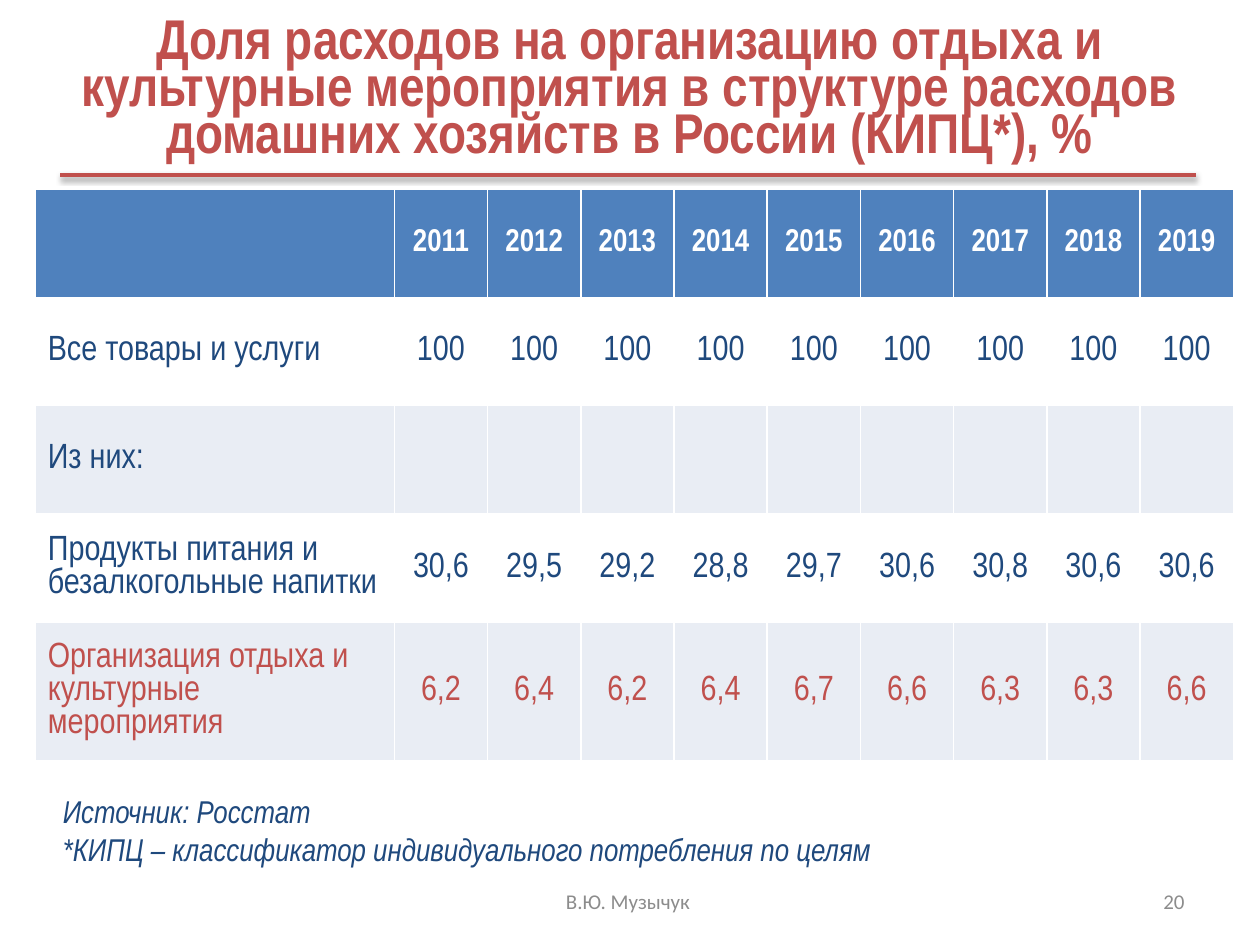
"""Build the slide on the share of leisure spending in Russian households."""
from dataclasses import dataclass, replace

from lxml.etree import SubElement
from pptx import Presentation
from pptx.dml.color import RGBColor
from pptx.enum.shapes import MSO_CONNECTOR
from pptx.enum.text import MSO_ANCHOR, PP_ALIGN
from pptx.oxml.ns import qn
from pptx.util import Inches, Pt


@dataclass(frozen=True)
class Theme:
    red: str = "C0504D"
    navy: str = "1F497D"
    blue: str = "4F81BD"
    pale: str = "E9EDF4"
    white: str = "FFFFFF"
    gray: str = "8C8C8C"
    narrow: str = "Arial Narrow"
    plain: str = "Calibri"
    title: int = 32
    body: int = 20
    small: int = 18
    foot: int = 12


@dataclass(frozen=True)
class Style:
    size: int
    color: str
    name: str
    bold: bool = False
    italic: bool = False
    align: PP_ALIGN = PP_ALIGN.LEFT
    space: float = 1.0


@dataclass(frozen=True)
class Label:
    lines: tuple[str, ...]
    box: tuple[float, float, float, float]
    style: Style
    anchor: MSO_ANCHOR = MSO_ANCHOR.MIDDLE
    wrap: bool = True
    inset: float = 0.05


@dataclass(frozen=True)
class Row:
    head: str
    values: tuple[str, ...]
    style: Style
    fill: str


THEME = Theme()
TITLE = Style(THEME.title, THEME.red, THEME.narrow, bold=True, align=PP_ALIGN.CENTER, space=0.7)
YEAR = Style(THEME.small, THEME.white, THEME.narrow, bold=True)
BODY = Style(THEME.body, THEME.navy, THEME.narrow)
NOTE = Style(THEME.small, THEME.navy, THEME.narrow, italic=True)
FOOT = Style(THEME.foot, THEME.gray, THEME.plain, align=PP_ALIGN.CENTER)

LABELS = (
    Label(("Доля расходов на организацию отдыха и культурные мероприятия "
           "в структуре расходов домашних хозяйств в России (КИПЦ*), %",),
          (0.5, 0.36, 9, 1.25), TITLE, inset=0.56),
    Label(("В.Ю. Музычук",), (3.4, 6.95, 3.17, 0.4), FOOT),
    Label(("20",), (7.17, 6.95, 2.33, 0.4), replace(FOOT, align=PP_ALIGN.RIGHT)),
    Label(("Источник: Росстат",
           "*КИПЦ – классификатор индивидуального потребления по целям"),
          (0.4, 6.24, 6.76, 0.71), NOTE, MSO_ANCHOR.TOP, wrap=False),
)
YEARS = tuple(str(year) for year in range(2011, 2020))
ROWS = (
    Row("", YEARS, YEAR, THEME.blue),
    Row("Все товары и услуги", ("100",) * len(YEARS), BODY, THEME.white),
    Row("Из них:", ("",) * len(YEARS), BODY, THEME.pale),
    Row("Продукты питания и безалкогольные напитки",
        ("30,6", "29,5", "29,2", "28,8", "29,7", "30,6", "30,8", "30,6", "30,6"),
        BODY, THEME.white),
    Row("Организация отдыха и культурные мероприятия",
        ("6,2", "6,4", "6,2", "6,4", "6,7", "6,6", "6,3", "6,3", "6,6"),
        replace(BODY, color=THEME.red), THEME.pale),
)


def write(frame, lines: tuple[str, ...], style: Style) -> None:
    """Fill a text frame with styled paragraphs."""
    form = {"size": Pt(style.size), "name": style.name,
            "bold": style.bold, "italic": style.italic}
    for index, line in enumerate(lines):
        para = frame.add_paragraph() if index else frame.paragraphs[0]
        para.alignment = style.align
        para.line_spacing = style.space
        if not line:
            para.font.size = Pt(style.size)
            continue
        run = para.add_run()
        run.text = line
        for key, value in form.items():
            setattr(run.font, key, value)
        run.font.color.rgb = RGBColor.from_string(style.color)


def draw_label(slide, label: Label) -> None:
    """Draw one text box."""
    frame = slide.shapes.add_textbox(*map(Inches, label.box)).text_frame
    form = {"word_wrap": label.wrap, "vertical_anchor": label.anchor,
            "margin_bottom": Inches(label.inset)}
    for key, value in form.items():
        setattr(frame, key, value)
    write(frame, label.lines, label.style)


def draw_table(slide, rows: tuple[Row, ...]) -> None:
    """Draw the table of spending shares."""
    first, rest, high = 2.85, 0.74, 0.86
    count = len(YEARS)
    table = slide.shapes.add_table(
        len(rows), count + 1, Inches(0.28), Inches(1.5),
        Inches(first + rest * count), Inches(high * len(rows))).table
    table.horz_banding = False
    for index, col in enumerate(table.columns):
        col.width = Inches(rest if index else first)
    for line, row in zip(table.rows, rows):
        line.height = Inches(high)
        for index, (cell, text) in enumerate(zip(line.cells, (row.head, *row.values))):
            cell.fill.solid()
            cell.fill.fore_color.rgb = RGBColor.from_string(row.fill)
            cell.vertical_anchor = MSO_ANCHOR.MIDDLE
            align = PP_ALIGN.CENTER if index else PP_ALIGN.LEFT
            write(cell.text_frame, (text,), replace(row.style, align=align))


def draw_rule(slide) -> None:
    """Draw the shadowed rule under the title."""
    rule = slide.shapes.add_connector(
        MSO_CONNECTOR.STRAIGHT, Inches(0.48), Inches(1.39), Inches(9.49), Inches(1.39))
    rule.line.color.rgb = RGBColor.from_string(THEME.red)
    rule.line.width = Pt(2)
    effect = SubElement(rule.element.spPr, qn("a:effectLst"))
    shade = SubElement(effect, qn("a:outerShdw"), blurRad=str(Pt(3.1)),
                       dist=str(Pt(1.6)), dir="5400000", rotWithShape="0")
    color = SubElement(shade, qn("a:srgbClr"), val="000000")
    SubElement(color, qn("a:alpha"), val="38000")


def main() -> None:
    """Build and save the deck."""
    deck = Presentation()
    deck.slide_width, deck.slide_height = Inches(10), Inches(7.5)
    slide = deck.slides.add_slide(deck.slide_layouts[6])
    for label in LABELS[:-1]:
        draw_label(slide, label)
    draw_table(slide, ROWS)
    draw_label(slide, LABELS[-1])
    draw_rule(slide)
    deck.save("out.pptx")


if __name__ == "__main__":
    main()
